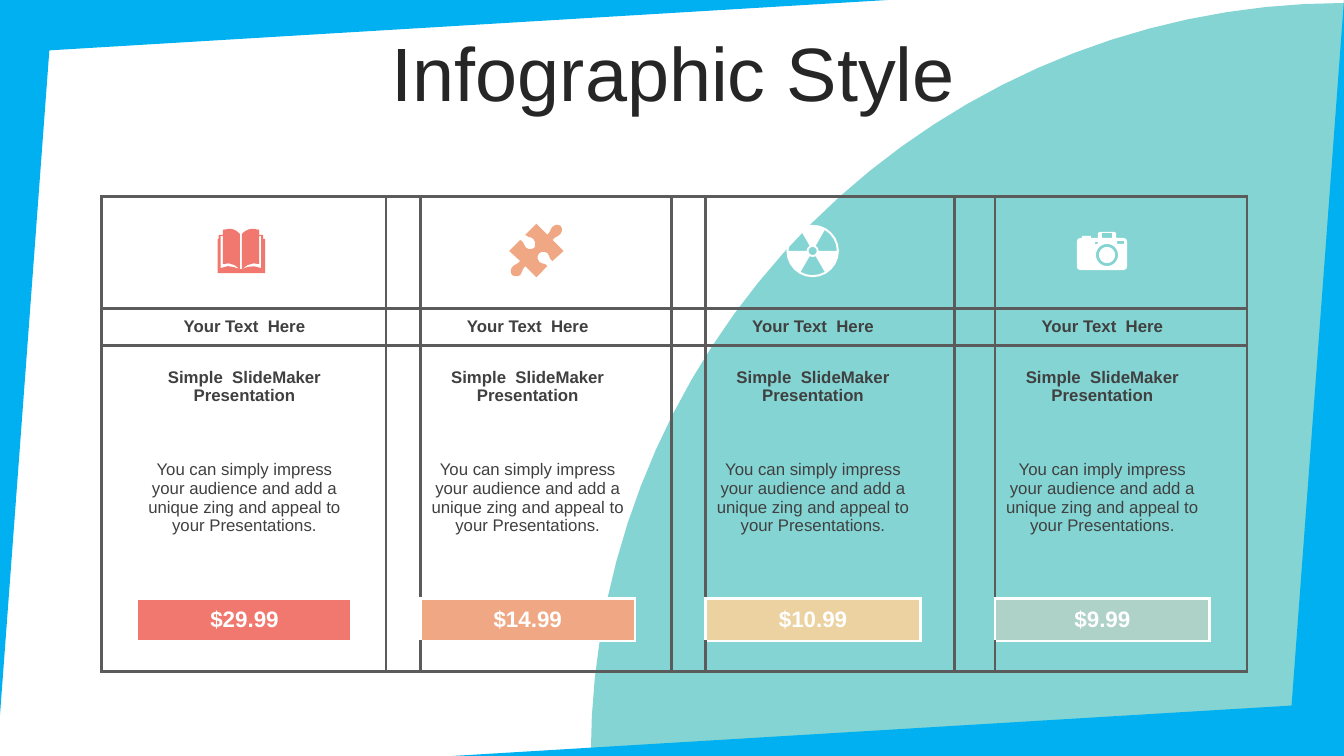
from dataclasses import dataclass
from math import cos, radians, sin

from lxml.etree import SubElement
from pptx import Presentation
from pptx.dml.color import RGBColor
from pptx.enum.text import MSO_ANCHOR as Anchor, PP_ALIGN as Align
from pptx.oxml.ns import qn
from pptx.util import Inches, Pt

TEAL = RGBColor(0x13, 0xAD, 0xAB)
BLUE = RGBColor(0x00, 0xB0, 0xF0)
WHITE = RGBColor(0xFF, 0xFF, 0xFF)
INK = RGBColor(0x26, 0x26, 0x26)
BODY = RGBColor(0x40, 0x40, 0x40)
GRID = RGBColor(0x5B, 0x5B, 0x5B)
CORAL = RGBColor(0xF0, 0x78, 0x6E)
PEACH = RGBColor(0xF0, 0xA8, 0x84)
SAND = RGBColor(0xEB, 0xD2, 0xA0)
MINT = RGBColor(0xAF, 0xD2, 0xC8)

FONT = "Arial"
NO_STYLE_NO_GRID = "{2D5ABB26-0587-4C30-8999-92F81FD0307C}"
COLUMNS = [0.35, 2.13, 0.34, 0.34, 2.13, 0.36, 0.34, 2.13, 0.34, 0.4, 2.13, 0.37]
ROWS = [1.11, 0.37, 0.81, 1.4, 0.3, 0.42, 0.3]
ICON_ROW, HEADING_ROW, SUBTITLE_ROW, DETAIL_ROW, PRICE_ROW, LAST_ROW = 0, 1, 2, 3, 5, 6
CURVE_STEPS = 3

Point = tuple[float, float]
Contour = list[Point]


@dataclass
class Plan:
    price: str
    color: RGBColor
    detail: str = ("You can simply impress your audience and add a unique zing "
                   "and appeal to your Presentations.")
    heading: str = "Your Text  Here"
    subtitle: str = "Simple  SlideMaker Presentation"


@dataclass
class Icon:
    color: RGBColor
    contours: list[Contour]


PLANS = [
    Plan("$29.99", CORAL),
    Plan("$14.99", PEACH),
    Plan("$10.99", SAND),
    Plan("$9.99", MINT, "You can imply impress your audience and add a unique zing "
                        "and appeal to your Presentations."),
]


def trace(*steps: tuple[float, ...]) -> Contour:
    """Turn points (x, y) and cubic curves (x1, y1, x2, y2, x, y) into a polyline."""
    points = [steps[0]]
    for step in steps[1:]:
        if len(step) == 2:
            points.append(step)
            continue
        p0, p1, p2, p3 = points[-1], step[:2], step[2:4], step[4:]
        for t in (i / CURVE_STEPS for i in range(1, CURVE_STEPS + 1)):
            u = 1 - t
            points.append(tuple(u**3 * a + 3 * u * u * t * b + 3 * u * t * t * c + t**3 * d
                                for a, b, c, d in zip(p0, p1, p2, p3)))
    return points


def arc(cx: float, cy: float, radius: float, start: float, span: float, steps: int) -> Contour:
    angles = [radians(start + span * i / steps) for i in range(steps + 1)]
    return [(cx + radius * cos(a), cy + radius * sin(a)) for a in angles]


def circle(cx: float, cy: float, radius: float) -> Contour:
    return arc(cx, cy, radius, 0, 345, 23)


def ring_sector(cx: float, cy: float, inner: float, outer: float, start: float) -> Contour:
    return arc(cx, cy, outer, start, 60, 4) + arc(cx, cy, inner, start + 60, -60, 2)


def box(left: float, top: float, right: float, bottom: float) -> Contour:
    return [(left, top), (right, top), (right, bottom), (left, bottom)]


PUZZLE = trace(
    (5.56, 2.24), (5.58, 2.26, 5.58, 2.3, 5.56, 2.32), (5.54, 2.35, 5.51, 2.34, 5.48, 2.38),
    (5.59, 2.49), (5.48, 2.59), (5.44, 2.57, 5.46, 2.54, 5.43, 2.51),
    (5.4, 2.49, 5.37, 2.5, 5.35, 2.51), (5.33, 2.53, 5.32, 2.57, 5.35, 2.6),
    (5.39, 2.63, 5.4, 2.6, 5.43, 2.64), (5.32, 2.75), (5.21, 2.64),
    (5.17, 2.68, 5.19, 2.69, 5.16, 2.73), (5.13, 2.75, 5.1, 2.74, 5.08, 2.73),
    (5.06, 2.71, 5.06, 2.67, 5.08, 2.65), (5.1, 2.62, 5.13, 2.63, 5.16, 2.59),
    (5.05, 2.49), (5.16, 2.38), (5.2, 2.4, 5.19, 2.43, 5.22, 2.46),
    (5.24, 2.48, 5.28, 2.47, 5.3, 2.46), (5.31, 2.44, 5.32, 2.4, 5.29, 2.37),
    (5.26, 2.34, 5.25, 2.37, 5.21, 2.33), (5.32, 2.22), (5.43, 2.33),
    (5.47, 2.29, 5.45, 2.28, 5.48, 2.25), (5.51, 2.22, 5.54, 2.23, 5.56, 2.24))
BOOK = trace(
    (2.38, 2.67), (2.4, 2.67), (2.47, 2.64, 2.51, 2.63, 2.59, 2.66), (2.59, 2.34),
    (2.57, 2.34), (2.57, 2.62), (2.52, 2.6, 2.45, 2.62, 2.4, 2.67), (2.4, 2.32),
    (2.43, 2.29, 2.46, 2.27, 2.51, 2.27), (2.57, 2.28),
    (2.57, 2.33), (2.61, 2.33), (2.61, 2.37), (2.63, 2.37), (2.63, 2.71), (2.16, 2.71),
    (2.16, 2.37), (2.17, 2.37), (2.17, 2.33), (2.21, 2.33), (2.21, 2.28),
    (2.28, 2.27), (2.32, 2.27, 2.35, 2.29, 2.38, 2.32),
    (2.38, 2.67), (2.33, 2.62, 2.27, 2.6, 2.21, 2.62), (2.21, 2.34), (2.19, 2.34),
    (2.19, 2.66), (2.27, 2.62, 2.31, 2.65, 2.38, 2.67))
CAMERA_BODY = [
    (10.91, 2.3), (11.05, 2.3), (11.07, 2.31), (11.07, 2.36), (11.14, 2.36), (11.17, 2.37),
    (11.18, 2.4), (11.18, 2.64), (11.17, 2.67), (11.14, 2.68), (10.72, 2.68), (10.69, 2.67),
    (10.68, 2.64), (10.68, 2.4), (10.69, 2.37), (10.72, 2.36), (10.73, 2.36), (10.73, 2.34),
    (10.82, 2.34), (10.82, 2.36), (10.89, 2.36), (10.89, 2.31)]

ICONS = [
    Icon(PEACH, [PUZZLE]),
    Icon(CORAL, [BOOK]),
    Icon(WHITE, [circle(8.06, 2.49, 0.26), circle(8.06, 2.49, 0.04)]
         + [ring_sector(8.06, 2.49, 0.06, 0.24, start) for start in (60, 180, 300)]),
    Icon(WHITE, [CAMERA_BODY, circle(10.98, 2.53, 0.11), circle(10.98, 2.53, 0.08),
                 box(10.86, 2.4, 10.89, 2.42), box(11.08, 2.39, 11.15, 2.42),
                 box(10.93, 2.31, 11.03, 2.36)]),
]


def add_outline(shapes, contours: list[Contour], color: RGBColor, opacity: int = 100) -> None:
    first, *others = [[(Inches(x), Inches(y)) for x, y in c] for c in contours]
    builder = shapes.build_freeform(*first[0], scale=1.0)
    builder.add_line_segments(first[1:], close=True)
    for points in others:
        builder.move_to(*points[0])
        builder.add_line_segments(points[1:], close=True)
    sp = builder.convert_to_shape()
    sp.shadow.inherit = False
    sp.fill.solid()
    sp.fill.fore_color.rgb = color
    sp.line.fill.background()
    if opacity < 100:
        rgb = sp._element.spPr.find(f"{qn('a:solidFill')}/{qn('a:srgbClr')}")
        SubElement(rgb, qn("a:alpha"), val=str(opacity * 1000))


def write(tf, text: str, *, size: float = 12, color: RGBColor = BODY, bold: bool = False):
    p = tf.paragraphs[0]
    p.alignment = Align.CENTER
    r = p.add_run()
    r.text = text
    r.font.name, r.font.size, r.font.bold = FONT, Pt(size), bold
    r.font.color.rgb = color
    return p


def cell_borders(row: int, part: int) -> dict[str, RGBColor]:
    """Give the edge colours of a cell; part is 0, 1 or 2 within its plan."""
    edges = {}
    if part == 0:
        edges["L"] = GRID
    if part == 2:
        edges["R"] = GRID
    if row in (ICON_ROW, HEADING_ROW):
        edges["T"] = GRID
    if row in (ICON_ROW, LAST_ROW):
        edges["B"] = GRID
    if row == PRICE_ROW:
        edges |= [{"R": WHITE}, dict.fromkeys("LRTB", WHITE), {"L": WHITE}][part]
    elif part == 1 and abs(row - PRICE_ROW) == 1:
        edges["B" if row < PRICE_ROW else "T"] = WHITE
    return edges


def draw_borders(cell, edges: dict[str, RGBColor]) -> None:
    tc_pr = cell._tc.get_or_add_tcPr()
    for side in "LRTB":
        if side in edges:
            line = SubElement(tc_pr, qn(f"a:ln{side}"), w=str(Pt(2.25)))
            SubElement(SubElement(line, qn("a:solidFill")), qn("a:srgbClr"), val=str(edges[side]))


def add_price_table(shapes) -> None:
    table = shapes.add_table(len(ROWS), len(COLUMNS), Inches(1.01), Inches(1.95),
                             Inches(sum(COLUMNS)), Inches(sum(ROWS))).table
    table.first_row = table.horz_banding = False
    table._tbl.tblPr.find(qn("a:tableStyleId")).text = NO_STYLE_NO_GRID
    for column, width in zip(table.columns, COLUMNS):
        column.width = Inches(width)
    for i, height in enumerate(ROWS):
        table.rows[i].height = Inches(height)
        for j in range(len(COLUMNS)):
            cell, (group, part) = table.cell(i, j), divmod(j, 3)
            plan = PLANS[group]
            cell.vertical_anchor = Anchor.MIDDLE
            draw_borders(cell, cell_borders(i, part))
            cell.fill.background()
            texts = {HEADING_ROW: plan.heading, SUBTITLE_ROW: plan.subtitle,
                     DETAIL_ROW: plan.detail, PRICE_ROW: plan.price}
            if part != 1 or i not in texts:
                SubElement(cell.text_frame.paragraphs[0]._p, qn("a:endParaRPr"), sz="1000")
            elif i == PRICE_ROW:
                cell.fill.solid()
                cell.fill.fore_color.rgb = plan.color
                write(cell.text_frame, texts[i], size=16, color=WHITE, bold=True)
            else:
                write(cell.text_frame, texts[i], bold=i != DETAIL_ROW)


def add_title(shapes, text: str) -> None:
    tf = shapes.add_textbox(Inches(0.35), Inches(0.37), Inches(12.66), Inches(0.79)).text_frame
    tf.word_wrap = True
    tf.vertical_anchor = Anchor.MIDDLE
    p = write(tf, text, size=54, color=INK)
    p.line_spacing, p.space_before = 0.9, Pt(10)


def main() -> None:
    prs = Presentation()
    prs.slide_width, prs.slide_height = Inches(13.33), Inches(7.5)
    shapes = prs.slides.add_slide(prs.slide_layouts[6]).shapes
    add_outline(shapes, [[(13.33, 7.5)] + arc(13.33, 7.5, 7.47, 180, 90, 30)], TEAL, opacity=52)
    add_title(shapes, "Infographic Style")
    add_price_table(shapes)
    for icon in ICONS:
        add_outline(shapes, icon.contours, icon.color)
    corner = [(-0.03, 0), (-0.03, 7.5), (0.49, 0.5), (8.81, 0)]
    add_outline(shapes, [corner], BLUE)
    add_outline(shapes, [[(13.3 - x, 7.5 - y) for x, y in corner]], BLUE)
    prs.save("out.pptx")


if __name__ == "__main__":
    main()
